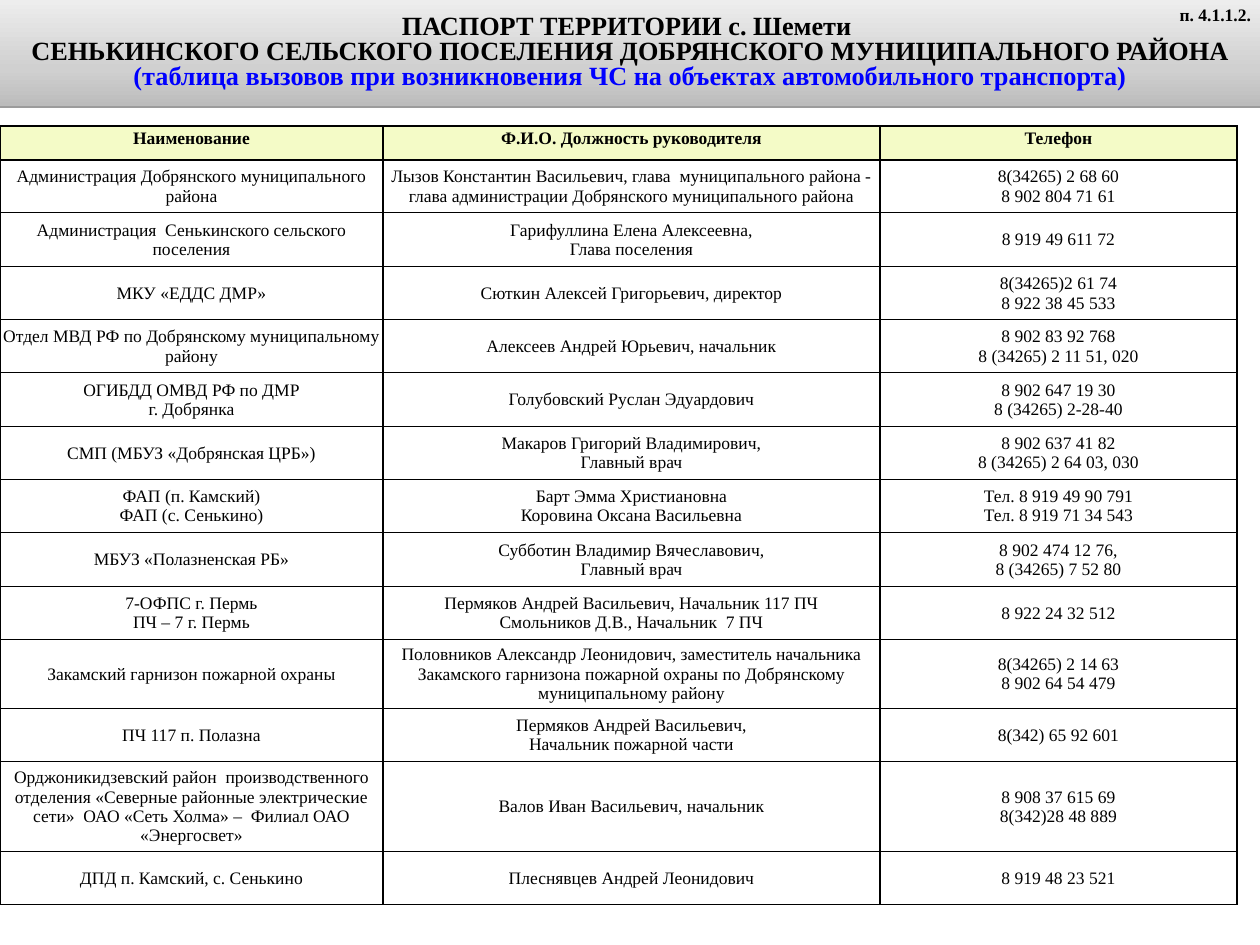
from copy import deepcopy

from lxml.etree import SubElement
from pptx import Presentation
from pptx.dml.color import RGBColor
from pptx.enum.shapes import MSO_SHAPE
from pptx.enum.text import MSO_ANCHOR, MSO_AUTO_SIZE, PP_ALIGN
from pptx.oxml.ns import qn
from pptx.util import Emu, Pt

PX = 914400 // 90
FONT = "Times New Roman"
BLACK = RGBColor(0x00, 0x00, 0x00)
BLUE = RGBColor(0x00, 0x00, 0xFF)
WHITE = RGBColor(0xFF, 0xFF, 0xFF)
PALE_YELLOW = RGBColor(0xF4, 0xFB, 0xC7)
BANNER_STOPS = [
    (0, RGBColor(0xBC, 0xBC, 0xBC)),
    (0.35, RGBColor(0xD0, 0xD0, 0xD0)),
    (1, RGBColor(0xED, 0xED, 0xED)),
]

TITLE_LINES = [
    ("ПАСПОРТ ТЕРРИТОРИИ с. Шемети ", BLACK),
    ("СЕНЬКИНСКОГО СЕЛЬСКОГО ПОСЕЛЕНИЯ ДОБРЯНСКОГО МУНИЦИПАЛЬНОГО РАЙОНА", BLACK),
    ("(таблица вызовов при возникновения ЧС на объектах автомобильного транспорта)", BLUE),
]
COLUMN_WIDTHS = [383, 497, 357]
ROW_HEIGHTS = [34] + [53, 54, 53] * 3 + [68, 53, 89, 53]
CONTACTS = [
    ("Наименование", "Ф.И.О. Должность руководителя", "Телефон"),
    ("Администрация Добрянского муниципального района",
     "Лызов Константин Васильевич, глава  муниципального района - "
     "глава администрации Добрянского муниципального района",
     "8(34265) 2 68 60\n8 902 804 71 61"),
    ("Администрация  Сенькинского сельского поселения",
     "Гарифуллина Елена Алексеевна,\nГлава поселения", "8 919 49 611 72"),
    ("МКУ «ЕДДС ДМР»", "Сюткин Алексей Григорьевич, директор",
     "8(34265)2 61 74\n8 922 38 45 533"),
    ("Отдел МВД РФ по Добрянскому муниципальному району",
     "Алексеев Андрей Юрьевич, начальник",
     "8 902 83 92 768\n8 (34265) 2 11 51, 020"),
    ("ОГИБДД ОМВД РФ по ДМР\nг. Добрянка", "Голубовский Руслан Эдуардович",
     "8 902 647 19 30\n8 (34265) 2-28-40"),
    ("СМП (МБУЗ «Добрянская ЦРБ»)",
     "Макаров Григорий Владимирович,\nГлавный врач",
     "8 902 637 41 82\n8 (34265) 2 64 03, 030"),
    ("ФАП (п. Камский)\nФАП (с. Сенькино)",
     "Барт Эмма Христиановна\nКоровина Оксана Васильевна",
     "Тел. 8 919 49 90 791\nТел. 8 919 71 34 543"),
    ("МБУЗ «Полазненская РБ»",
     "Субботин Владимир Вячеславович,\nГлавный врач",
     "8 902 474 12 76,\n8 (34265) 7 52 80"),
    ("7-ОФПС г. Пермь\nПЧ – 7 г. Пермь",
     "Пермяков Андрей Васильевич, Начальник 117 ПЧ\n"
     "Смольников Д.В., Начальник  7 ПЧ", "8 922 24 32 512"),
    ("Закамский гарнизон пожарной охраны",
     "Половников Александр Леонидович, заместитель начальника "
     "Закамского гарнизона пожарной охраны по Добрянскому муниципальному району",
     "8(34265) 2 14 63\n8 902 64 54 479"),
    ("ПЧ 117 п. Полазна",
     "Пермяков Андрей Васильевич,\nНачальник пожарной части", "8(342) 65 92 601"),
    ("Орджоникидзевский район  производственного отделения "
     "«Северные районные электрические сети»  ОАО «Сеть Холма» –  "
     "Филиал ОАО «Энергосвет»",
     "Валов Иван Васильевич, начальник", "8 908 37 615 69\n8(342)28 48 889"),
    ("ДПД п. Камский, с. Сенькино", "Плеснявцев Андрей Леонидович",
     "8 919 48 23 521"),
]


def px(length):
    """Turn slide pixels into EMU."""
    return Emu(length * PX)


def style_paragraph(paragraph, size, color=BLACK, bold=False, align=PP_ALIGN.CENTER):
    """Set the alignment and font of a paragraph."""
    paragraph.alignment = align
    font = paragraph.font
    font.name, font.size, font.bold = FONT, Pt(size), bold
    font.color.rgb = color


def add_banner(slide, left, top, width, height):
    """Draw the shaded title banner with its hard lower shadow."""
    banner = slide.shapes.add_shape(
        MSO_SHAPE.RECTANGLE, px(left), px(top), px(width), px(height))
    banner.line.fill.background()
    banner.fill.gradient()
    banner.fill.gradient_angle = 90
    stop_list = banner.fill._fill._gradFill.find(qn("a:gsLst"))
    stop_list.append(deepcopy(stop_list[-1]))
    for stop, (position, color) in zip(banner.fill.gradient_stops, BANNER_STOPS):
        stop.position = position
        stop.color.rgb = color

    banner.shadow.inherit = False
    effects = banner._element.spPr.find(qn("a:effectLst"))
    shadow = SubElement(effects, qn("a:outerShdw"), blurRad="0", dist=str(Pt(1.6)),
                        dir="5400000", rotWithShape="0")
    shade = SubElement(shadow, qn("a:srgbClr"), val=str(BLACK))
    SubElement(shade, qn("a:alpha"), val="38000")

    title = banner.text_frame
    title.word_wrap = True
    title.vertical_anchor = MSO_ANCHOR.MIDDLE
    title.text = "\n".join(line for line, _ in TITLE_LINES)
    for paragraph, (_, color) in zip(title.paragraphs, TITLE_LINES):
        style_paragraph(paragraph, 21, color, bold=True)
        paragraph.line_spacing = 0.8


def add_section_number(slide, left, top, width, height):
    """Place the section number in the upper right corner."""
    box = slide.shapes.add_textbox(px(left), px(top), px(width), px(height))
    number = box.text_frame
    number.word_wrap = True
    number.auto_size = MSO_AUTO_SIZE.SHAPE_TO_FIT_TEXT
    number.text = "п. 4.1.1.2."
    style_paragraph(number.paragraphs[0], 14, bold=True, align=PP_ALIGN.RIGHT)


def add_borders(cell):
    """Put thin black borders on every side of a cell."""
    properties = cell._tc.get_or_add_tcPr()
    for index, side in enumerate(("a:lnL", "a:lnR", "a:lnT", "a:lnB")):
        border = properties.makeelement(qn(side), {"w": str(Pt(1))})
        properties.insert(index, border)
        fill = SubElement(border, qn("a:solidFill"))
        SubElement(fill, qn("a:srgbClr"), val=str(BLACK))


def fill_cell(cell, text, is_header):
    """Write and style one cell of the contact table."""
    cell.text = text
    cell.margin_left = cell.margin_right = px(2)
    cell.margin_top = cell.margin_bottom = px(3)
    cell.vertical_anchor = MSO_ANCHOR.TOP if is_header else MSO_ANCHOR.MIDDLE
    cell.fill.solid()
    cell.fill.fore_color.rgb = PALE_YELLOW if is_header else WHITE
    for paragraph in cell.text_frame.paragraphs:
        style_paragraph(paragraph, 14, bold=is_header)
    add_borders(cell)


def add_contact_table(slide, left, top):
    """Draw the table of emergency contacts."""
    table = slide.shapes.add_table(
        len(CONTACTS), len(COLUMN_WIDTHS), px(left), px(top),
        px(sum(COLUMN_WIDTHS)), px(sum(ROW_HEIGHTS))).table
    for column, width in zip(table.columns, COLUMN_WIDTHS):
        column.width = px(width)
    for index, (row, height) in enumerate(zip(table.rows, ROW_HEIGHTS)):
        row.height = px(height)
        for cell, text in zip(row.cells, CONTACTS[index]):
            fill_cell(cell, text, is_header=index == 0)


def main():
    """Build and save the territory passport slide."""
    presentation = Presentation()
    presentation.slide_width, presentation.slide_height = px(1260), px(945)
    slide = presentation.slides.add_slide(presentation.slide_layouts[6])
    add_banner(slide, 0, 0, 1260, 106)
    add_section_number(slide, 1165, 0, 95, 31)
    add_contact_table(slide, 0, 126)
    presentation.save("out.pptx")


if __name__ == "__main__":
    main()
